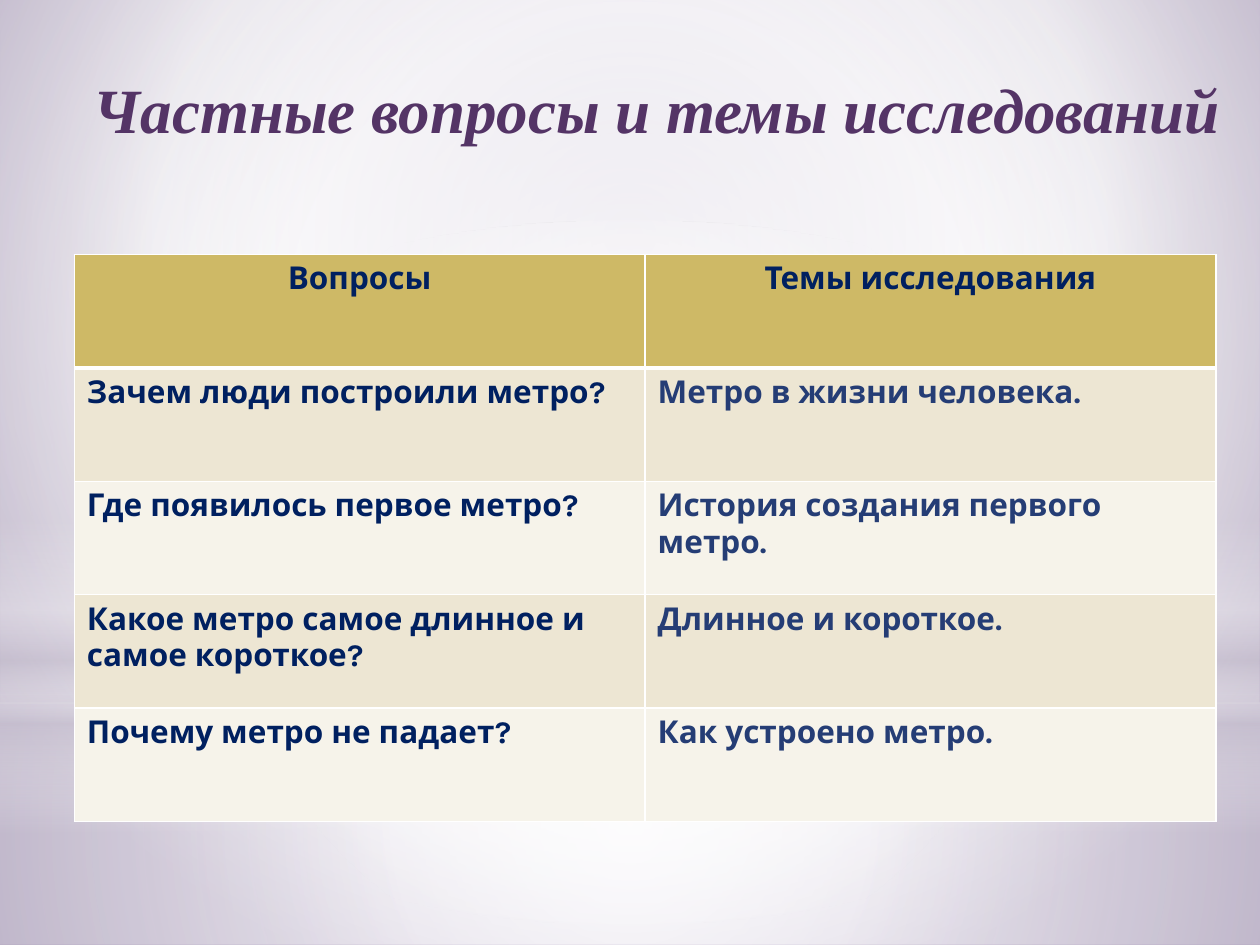
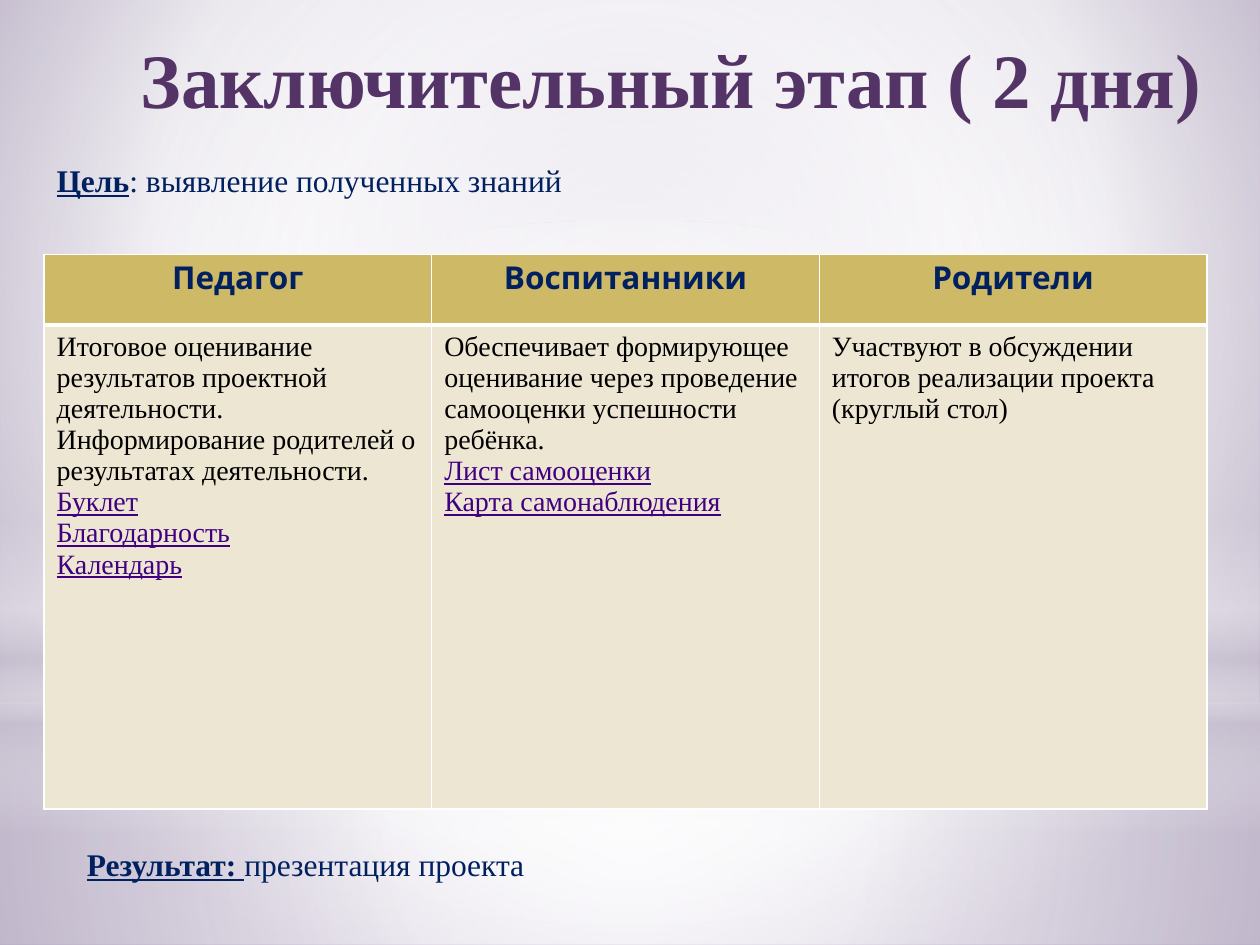
"""Build two slides about a children's metro project: research questions and the final stage."""
import pptx
import pptx.dml.color
import pptx.enum.shapes
import pptx.enum.text
import pptx.oxml
import pptx.oxml.ns
import pptx.util
from pptx.util import Inches

RGB = pptx.dml.color.RGBColor
ALIGN = pptx.enum.text.PP_ALIGN
SHAPE = pptx.enum.shapes.MSO_SHAPE

PURPLE = RGB(0x54, 0x34, 0x66)
NAVY = RGB(0x00, 0x20, 0x60)
BLUE = RGB(0x25, 0x3D, 0x75)
VIOLET = RGB(0x41, 0x00, 0x82)
BLACK = RGB(0, 0, 0)
WHITE = RGB(0xFF, 0xFF, 0xFF)
LILAC = RGB(0xC9, 0xC2, 0xD1)
MIST = RGB(0xC1, 0xB7, 0xCD)
DUSK = RGB(0xA1, 0x91, 0xB5)
GOLD = RGB(0xCE, 0xB9, 0x66)
BANDS = (RGB(0xED, 0xE6, 0xD3), RGB(0xF6, 0xF3, 0xEA))
SERIF, SANS = "Times New Roman", "Karla"

CENTRE = (50, 50, 50, 50)
BACKDROP = [(0, MIST, 100), (60, WHITE, 100), (100, DUSK, 100)]
BACKDROP_FOCUS = (20, 10, 20, 60)
GLOWS = [
    (SHAPE.RECTANGLE, 5.58, 1.92, [(0, WHITE, 91), (37, WHITE, 76), (100, LILAC, 79)], CENTRE),
    (SHAPE.RECTANGLE, 0, 5.58, [(0, WHITE, 89), (48, WHITE, 62), (100, LILAC, 79)], CENTRE),
    (SHAPE.RECTANGLE, 4.12, 2.5, [(0, WHITE, 0), (29, WHITE, 30), (45, LILAC, 40),
                                  (55, WHITE, 26), (65, LILAC, 60), (100, WHITE, 0)], None),
    (SHAPE.OVAL, 1.75, 5.58, [(0, WHITE, 100), (56, WHITE, 0)], CENTRE),
]

QUESTIONS_TITLE = "Частные вопросы и темы исследований"
QUESTIONS_HEADER = ["Вопросы", "Темы исследования"]
QUESTIONS = [
    ("Зачем люди построили метро?", "Метро в жизни человека."),
    ("Где появилось первое метро?", "История создания первого метро."),
    ("Какое метро самое длинное и самое короткое?", "Длинное и короткое."),
    ("Почему метро не падает?", "Как устроено метро."),
]

STAGE_TITLE = "Заключительный этап ( 2 дня)"
GOAL = ("Цель", ": выявление полученных знаний")
RESULT = ("Результат: ", "презентация проекта")
STAGE = {
    "Педагог": (["Итоговое оценивание результатов проектной деятельности.",
                 "Информирование родителей о результатах деятельности."],
                ["Буклет", "Благодарность", "Календарь"]),
    "Воспитанники": (["Обеспечивает формирующее оценивание через проведение "
                      "самооценки успешности ребёнка."],
                     ["Лист самооценки", "Карта самонаблюдения"]),
    "Родители": (["Участвуют в обсуждении итогов реализации проекта", "(круглый стол)"], []),
}


def set_gradient(fill, parent, stops, focus):
    """Fill with stops of (position, colour, opacity), round a focus or downwards."""
    fill.background()
    stop_xml = "".join(
        f'<a:gs pos="{position * 1000}"><a:srgbClr val="{colour}">'
        f'<a:alpha val="{opacity * 1000}"/></a:srgbClr></a:gs>'
        for position, colour, opacity in stops)
    if focus:
        sides = " ".join(f'{side}="{inset * 1000}"' for side, inset in zip("ltrb", focus))
        direction = f'<a:path path="circle"><a:fillToRect {sides}/></a:path>'
    else:
        direction = '<a:lin ang="5400000" scaled="0"/>'
    gradient = pptx.oxml.parse_xml(
        f'<a:gradFill {pptx.oxml.ns.nsdecls("a")} rotWithShape="1">'
        f"<a:gsLst>{stop_xml}</a:gsLst>{direction}</a:gradFill>")
    parent.replace(parent.find(pptx.oxml.ns.qn("a:noFill")), gradient)


def dress_master(deck, page):
    """Draw the glows on a page and move them behind everything on the master."""
    master = deck.slide_master
    common = master.element.cSld
    backdrop = master.background.fill
    set_gradient(backdrop, common.bg.bgPr, BACKDROP, BACKDROP_FOCUS)
    for position, (kind, top, height, stops, focus) in enumerate(GLOWS, start=2):
        glow = page.shapes.add_shape(kind, 0, Inches(top), deck.slide_width, Inches(height))
        glow.shadow.inherit = False
        set_gradient(glow.fill, glow.element.spPr, stops, focus)
        glow.line.fill.background()
        common.spTree.insert(position, glow.element)


def add_span(para, text, size, colour, font=SERIF, bold=False, italic=False, underline=False):
    """Append a formatted run."""
    span = para.add_run()
    span.text = text
    span.font.name, span.font.size = font, pptx.util.Pt(size)
    span.font.bold, span.font.italic, span.font.underline = bold, italic, underline
    span.font.color.rgb = colour


def add_box(page, left, top, width, height, wrap=True):
    """Add an empty text box and return its text frame."""
    box = page.shapes.add_textbox(Inches(left), Inches(top), Inches(width), Inches(height))
    box.text_frame.word_wrap = wrap
    return box.text_frame


def add_title(page, text, top, width, size, align, italic=False):
    """Add the purple slide title."""
    frame = add_box(page, 0.43, top, width, 1.25)
    frame.margin_top = Inches(0.12)
    frame.paragraphs[0].alignment = align
    add_span(frame.paragraphs[0], text, size, PURPLE, bold=True, italic=italic)


def add_note(page, left, top, width, note, wrap=True):
    """Add a line with an underlined label."""
    label, text = note
    para = add_box(page, left, top, width, 0.4, wrap).paragraphs[0]
    add_span(para, label, 18, NAVY, bold=True, underline=True)
    add_span(para, text, 18, NAVY)


def style_cell(cell, colour, bottom):
    """Fill a cell and give it white borders."""
    cell.fill.solid()
    cell.fill.fore_color.rgb = colour
    properties = cell._tc.get_or_add_tcPr()
    for position, (side, points) in enumerate(zip("LRTB", (1, 1, 1, bottom))):
        properties.insert(position, pptx.oxml.parse_xml(
            f'<a:ln{side} {pptx.oxml.ns.nsdecls("a")} w="{pptx.util.Pt(points)}">'
            f'<a:solidFill><a:srgbClr val="{WHITE}"/></a:solidFill></a:ln{side}>'))


def add_grid(page, left, width, heights, header):
    """Add a styled table with its header filled in."""
    table = page.shapes.add_table(len(heights), len(header), Inches(left), Inches(2.02),
                                  Inches(width), Inches(sum(heights))).table
    for number, height in enumerate(heights):
        table.rows[number].height = Inches(height)
        for cell in table.rows[number].cells:
            if number == 0:
                style_cell(cell, GOLD, 3)
            else:
                style_cell(cell, BANDS[(number - 1) % 2], 1)
    for cell, text in zip(table.rows[0].cells, header):
        para = cell.text_frame.paragraphs[0]
        para.alignment = ALIGN.CENTER
        add_span(para, text, 18, NAVY, SANS, bold=True)
    return table


def fill_questions(page):
    """Questions and the research topics that answer them."""
    add_title(page, QUESTIONS_TITLE, 0.44, 9.57, 36, ALIGN.CENTER, italic=True)
    table = add_grid(page, 0.59, 9.06, [0.9] * (len(QUESTIONS) + 1), QUESTIONS_HEADER)
    for number, texts in enumerate(QUESTIONS, start=1):
        for cell, text, colour in zip(table.rows[number].cells, texts, (NAVY, BLUE)):
            add_span(cell.text_frame.paragraphs[0], text, 18, colour, SANS, bold=True)


def fill_stage(page):
    """Final stage: what each group does."""
    add_title(page, STAGE_TITLE, 0.13, 9.21, 44, ALIGN.RIGHT)
    table = add_grid(page, 0.35, 9.23, [0.56, 3.84], list(STAGE))
    for cell, (tasks, documents) in zip(table.rows[1].cells, STAGE.values()):
        frame = cell.text_frame
        for number, text in enumerate(tasks + documents):
            para = frame.add_paragraph() if number else frame.paragraphs[0]
            listed = number >= len(tasks)
            add_span(para, text, 16, VIOLET if listed else BLACK, underline=listed)
    add_note(page, 0.35, 1.23, 8.98, GOAL)
    add_note(page, 0.59, 6.66, 3.78, RESULT, wrap=False)


def main():
    """Build and save the deck."""
    deck = pptx.Presentation()
    deck.slide_width, deck.slide_height = Inches(10), Inches(7.5)
    blank = deck.slide_layouts[6]
    questions_page, stage_page = (deck.slides.add_slide(blank) for _ in range(2))
    dress_master(deck, questions_page)
    fill_questions(questions_page)
    fill_stage(stage_page)
    deck.save("out.pptx")


if __name__ == "__main__":
    main()
